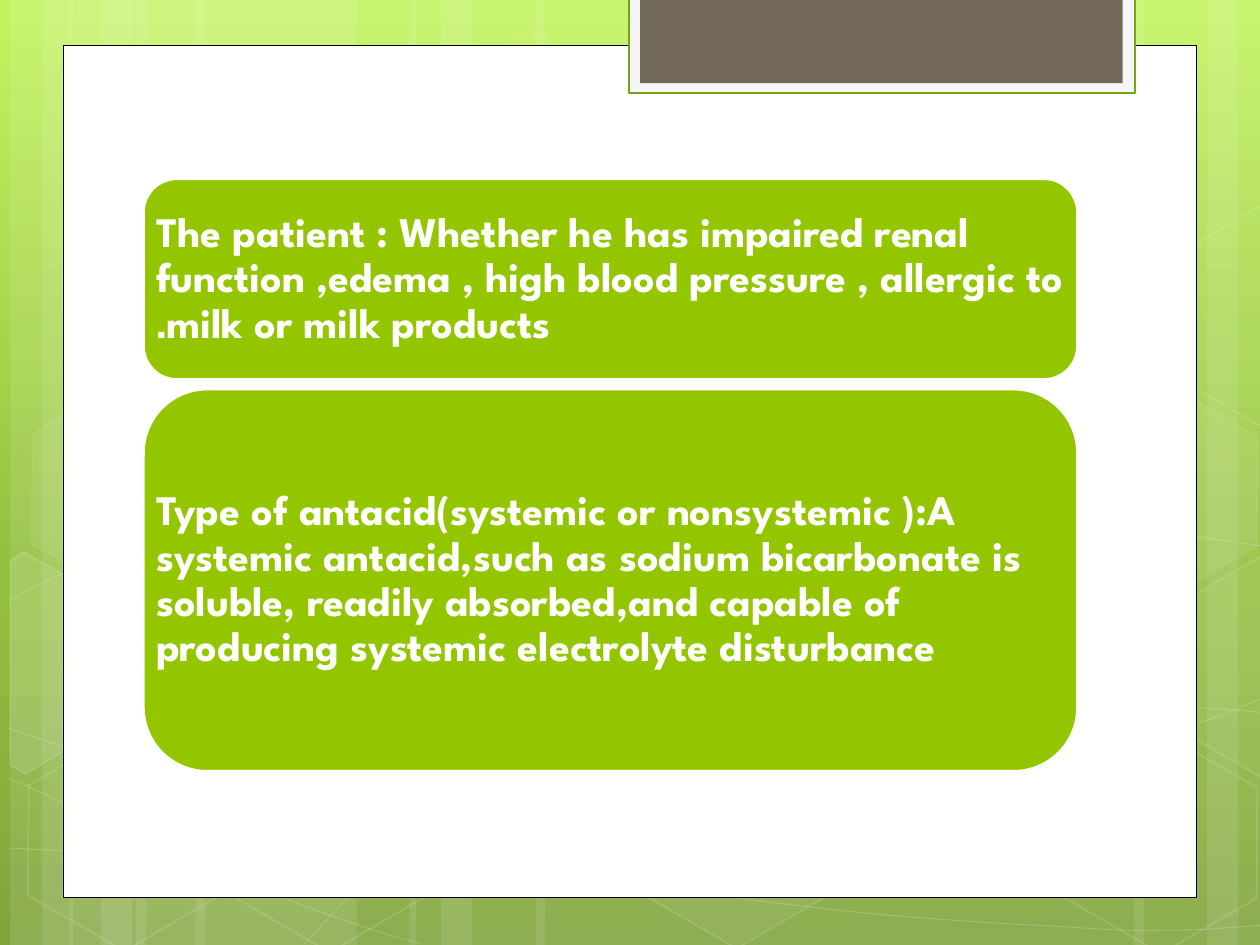
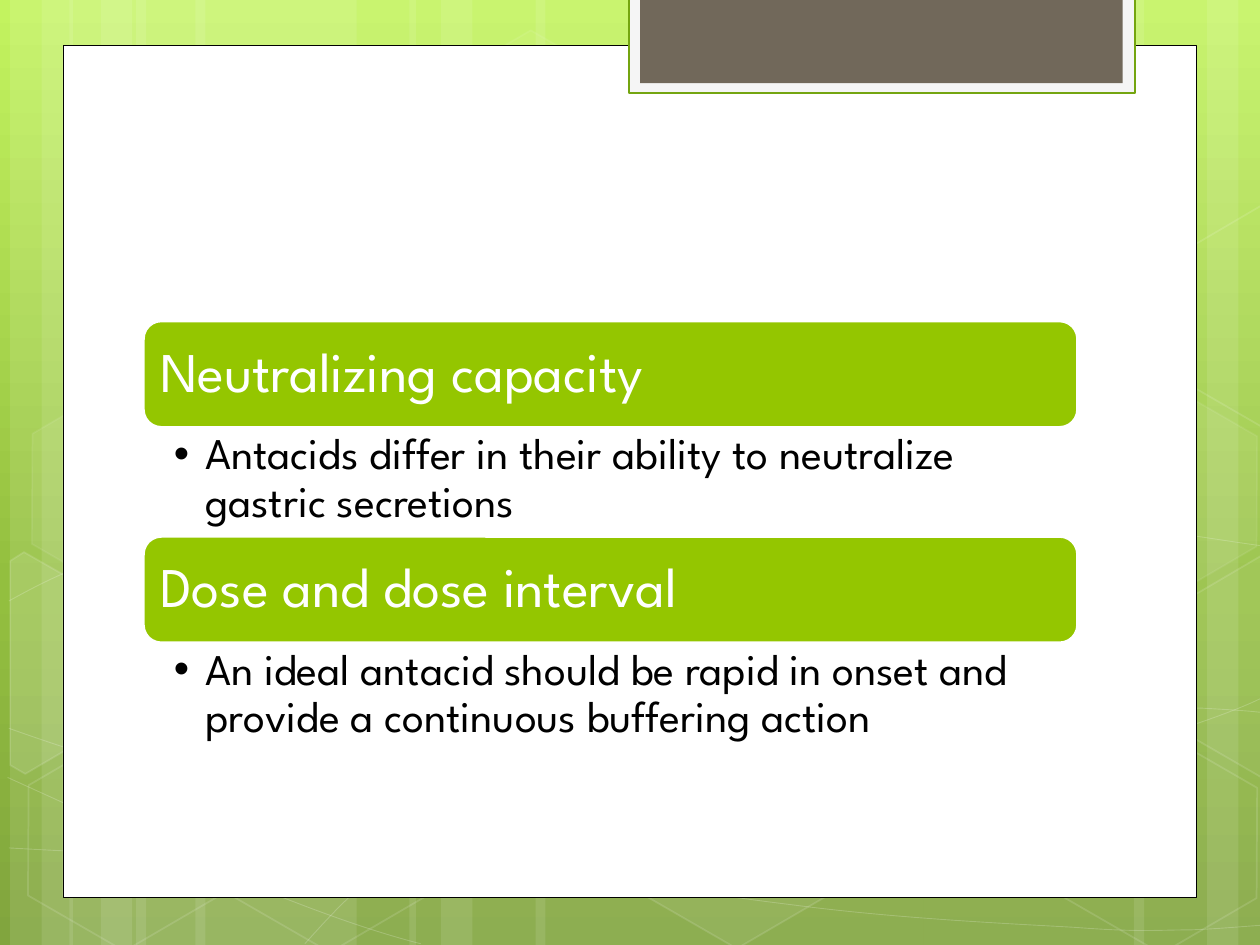
from copy import deepcopy
from math import cos, radians, sin

from lxml.etree import Element, SubElement
from pptx import Presentation
from pptx.dml.color import RGBColor
from pptx.enum.shapes import MSO_SHAPE
from pptx.enum.text import MSO_ANCHOR, PP_ALIGN
from pptx.oxml.ns import qn
from pptx.util import Inches, Pt

# Shared look
FONT = "League Spartan"
WHITE, BLACK, GREEN = "FFFFFF", "000000", "94C600"
SKY = [(0, "C3F35F"), (0.62, "93BF3F"), (1, "81A53E")]
LEFT, WIDTH = 1.14, 7.41
TILT = 30

# Backdrop: left and width of each stripe
STRIPES = [(1.08, 1.75), (0.08, 0.5), (0.33, 0.83), (1.55, 1.75),
           (0.55, 0.5), (0.8, 0.83), (7.33, 1.75), (9.58, 0.5),
           (9, 0.83), (4.25, 3.08), (3.25, 0.5), (3.5, 0.83)]

# Each wave: start point, then curves (six numbers) or lines (two numbers)
WAVES = [
    [(0.07, 6.73), (0.61, 6.76, 1.15, 6.79, 1.9, 6.78),
     (2.65, 6.77, 3.58, 6.75, 4.58, 6.65),
     (5.58, 6.55, 7, 6.36, 7.92, 6.17),
     (8.83, 5.98, 9.77, 5.68, 10.07, 5.51)],
    [(0.07, 4.77), (0.36, 4.61, 0.65, 4.46, 1.21, 4.31),
     (1.78, 4.16, 2.59, 3.94, 3.47, 3.87),
     (4.36, 3.8, 5.44, 3.79, 6.54, 3.87),
     (7.64, 3.95, 9.47, 4.26, 10.07, 4.34)],
    [(0.06, 6.17), (1.27, 6.72, 2.47, 7.27, 3.34, 7.49)],
    [(0.07, 5.78), (0.38, 5.89, 0.7, 6, 1.28, 6.16),
     (1.86, 6.31, 2.73, 6.56, 3.57, 6.73),
     (4.4, 6.9, 5.45, 7.08, 6.28, 7.18),
     (7.11, 7.29, 8, 7.33, 8.53, 7.36),
     (9.05, 7.4, 9.19, 7.38, 9.45, 7.38),
     (9.71, 7.37, 9.89, 7.35, 10.07, 7.34)],
    [(2.42, 7.49), (2.6, 7.29, 2.78, 7.09, 3.02, 6.91),
     (3.26, 6.73, 3.6, 6.53, 3.88, 6.39),
     (4.16, 6.25, 4.33, 6.19, 4.7, 6.09),
     (5.06, 5.99, 5.73, 5.85, 6.08, 5.78),
     (6.44, 5.71, 6.49, 5.71, 6.8, 5.69),
     (7.11, 5.66, 7.6, 5.63, 7.94, 5.62),
     (8.29, 5.61, 8.86, 5.62, 8.86, 5.62), (9.53, 5.62),
     (9.71, 5.63, 9.88, 5.64, 9.97, 5.65),
     (10.06, 5.66, 10.03, 5.65, 10.06, 5.66)],
]

# Left, top, fill opacity (None for no fill) and line opacity
CELLS = [(3.34, 0.36, 4, 8), (4.97, 5.89, 6, 12), (0.11, 5.91, None, 12),
         (0.14, 3.12, 7, 8), (1.74, 5.92, None, 12), (7.53, 4.53, 10, 12),
         (8.34, 5.93, None, 12), (8.34, 3.14, 7, 8)]

# Cells cut by the slide edge: centre, corners and fill opacity
CUT_CELLS = [
    ((0.36, 5.35), [(0.08, 4.45), (0.19, 4.38), (0.96, 4.82), (0.95, 5.7),
                    (0.2, 6.14), (0.08, 6.07)], 10),
    ((9.85, 5.2), [(9.26, 4.85), (10.01, 4.41), (10.09, 4.46),
                   (10.09, 6.13), (10.02, 6.17), (9.26, 5.73)], 4),
    ((9.85, 2.41), [(9.26, 2.07), (10.01, 1.63), (10.1, 1.68),
                    (10.09, 3.35), (10.02, 3.39), (9.26, 2.95)], None),
]


def color(code):
    return RGBColor.from_string(code)


def fade(node, alpha):
    """Set the opacity, in percent, of the colour in a fill or line."""
    for tint in node.iter(qn("a:srgbClr")):
        SubElement(tint, qn("a:alpha"), val=str(alpha * 1000))


def paint(shape, fill=None, alpha=100, line=None, width=1, clear=100):
    shape.shadow.inherit = False
    props = shape._element.spPr
    if fill:
        shape.fill.solid()
        shape.fill.fore_color.rgb = color(fill)
        if alpha < 100:
            fade(props.find(qn("a:solidFill")), alpha)
    else:
        shape.fill.background()
    if line:
        shape.line.color.rgb = color(line)
        shape.line.width = Pt(width)
        if clear < 100:
            fade(props.find(qn("a:ln")), clear)
    else:
        shape.line.fill.background()


def block(slide, kind, box, **look):
    shape = slide.shapes.add_shape(kind, *map(Inches, box))
    paint(shape, **look)
    return shape


def outline(slide, points, close, **look):
    dots = [(Inches(x), Inches(y)) for x, y in points]
    pen = slide.shapes.build_freeform(*dots[0])
    pen.add_line_segments(dots[1:], close=close)
    shape = pen.convert_to_shape()
    paint(shape, **look)
    return shape


def wave(slide, start, parts):
    """Draw the points as lines, then join each three into a curve."""
    points = [start] + [part[i:i + 2] for part in parts
                        for i in range(0, len(part), 2)]
    shape = outline(slide, points, False, line=WHITE, width=0.5, clear=20)
    lines = iter(list(shape._element.spPr.iter(qn("a:lnTo"))))
    for part in parts:
        first = next(lines)
        if len(part) == 6:
            curve = Element(qn("a:cubicBezTo"))
            first.addprevious(curve)
            for line in (first, next(lines), next(lines)):
                curve.append(line[0])
                line.getparent().remove(line)


def turn(point, mid):
    """Turn a point back by the tilt around the middle of its cell."""
    c, s = cos(radians(TILT)), sin(radians(TILT))
    x, y = point[0] - mid[0], point[1] - mid[1]
    return mid[0] + x * c + y * s, mid[1] - x * s + y * c


def write(slide, text, box, size=24, ink=WHITE, bold=False, pads=(0.1,) * 4,
          anchor=MSO_ANCHOR.MIDDLE, after=0.35, bullet=False, rtl=False):
    frame = slide.shapes.add_textbox(*map(Inches, box)).text_frame
    frame.word_wrap = True
    frame.vertical_anchor = anchor
    (frame.margin_left, frame.margin_top,
     frame.margin_right, frame.margin_bottom) = map(Inches, pads)
    para = frame.paragraphs[0]
    para.alignment = PP_ALIGN.LEFT
    para.line_spacing = 0.9
    para.space_after = Pt(size * after)
    props = para._p.get_or_add_pPr()
    if rtl:
        props.set("rtl", "1")
    if bullet:
        para.level = 1
        props.set("marL", str(Inches(0.25)))
        props.set("indent", str(-Inches(0.25)))
        SubElement(props, qn("a:buFont"), typeface="Arial")
        SubElement(props, qn("a:buChar"), char="•")
    run = para.add_run()
    run.text = text
    run.font.name = FONT
    run.font.size = Pt(size)
    run.font.bold = bold
    run.font.color.rgb = color(ink)


def sky(slide):
    fill = slide.background.fill
    fill.gradient()
    fill.gradient_angle = 270
    first = fill.gradient_stops[0]._gs
    first.addnext(deepcopy(first))
    for stop, (place, code) in zip(fill.gradient_stops, SKY):
        stop.position = place
        stop.color.rgb = color(code)


def base(deck):
    """Add a slide with the backdrop, the white page and the top tab."""
    slide = deck.slides.add_slide(deck.slide_layouts[6])
    sky(slide)
    for left, width in STRIPES:
        block(slide, MSO_SHAPE.RECTANGLE, (left, 0, width, 7.5),
              fill=WHITE, alpha=10)
    for start, *parts in WAVES:
        wave(slide, start, parts)
    for left, top, alpha, clear in CELLS:
        cell = block(slide, MSO_SHAPE.HEXAGON, (left, top, 1.75, 1.52),
                     fill=alpha and WHITE, alpha=alpha or 100,
                     line=WHITE, clear=clear)
        cell.adjustments[0] = 0.285
        cell.rotation = TILT
    for mid, points, alpha in CUT_CELLS:
        cell = outline(slide, [turn(point, mid) for point in points], True,
                       fill=alpha and WHITE, alpha=alpha or 100,
                       line=WHITE, clear=12)
        cell.rotation = TILT
    # Page and tab
    block(slide, MSO_SHAPE.RECTANGLE, (0.5, 0.36, 9, 6.76),
          fill=WHITE, line=BLACK, width=0.5)
    block(slide, MSO_SHAPE.RECTANGLE, (4.99, -0.02, 4.02, 0.76),
          fill="F5F5F5", line="74A510", width=1.25)
    block(slide, MSO_SHAPE.RECTANGLE, (5.08, -0.02, 3.83, 0.68),
          fill="71685A")
    return slide


def card(slide, text, top, height, **style):
    box = (LEFT, top, WIDTH, height)
    block(slide, MSO_SHAPE.ROUNDED_RECTANGLE, box,
          fill=GREEN, line=WHITE, width=1.25)
    write(slide, text, box, **style)


def topic(slide, title, note, top, room):
    """Add a green heading with one bullet below it."""
    card(slide, title, top, 0.84, size=32, pads=(0.13,) * 4)
    write(slide, note, (LEFT, top + 0.84, WIDTH, room), size=25, ink=BLACK,
          pads=(0.24, 0.04, 0.25, 0.04), anchor=MSO_ANCHOR.TOP,
          after=0.2, bullet=True)


def main():
    deck = Presentation()
    deck.slide_width, deck.slide_height = Inches(10), Inches(7.5)

    # Patient and type of antacid
    slide = base(deck)
    bold = {"bold": True, "pads": (0.1, 0.1, 0.08, 0.1)}
    card(slide, "The patient : Whether he has impaired renal function ,edema "
         ", high blood pressure , allergic to milk or milk products.",
         1.42, 1.59, rtl=True, **bold)
    card(slide, "Type of antacid(systemic or nonsystemic ):A systemic "
         "antacid,such as sodium bicarbonate is soluble, readily "
         "absorbed,and capable of producing systemic electrolyte disturbance",
         3.09, 3.03, **bold)

    # Capacity and dose
    slide = base(deck)
    topic(slide, "Neutralizing capacity", "Antacids differ in their ability "
          "to neutralize gastric secretions", 2.55, 0.87)
    topic(slide, "Dose and dose interval", "An ideal antacid should be rapid "
          "in onset and provide a continuous buffering action", 4.26, 1.27)

    deck.save("out.pptx")


if __name__ == "__main__":
    main()
